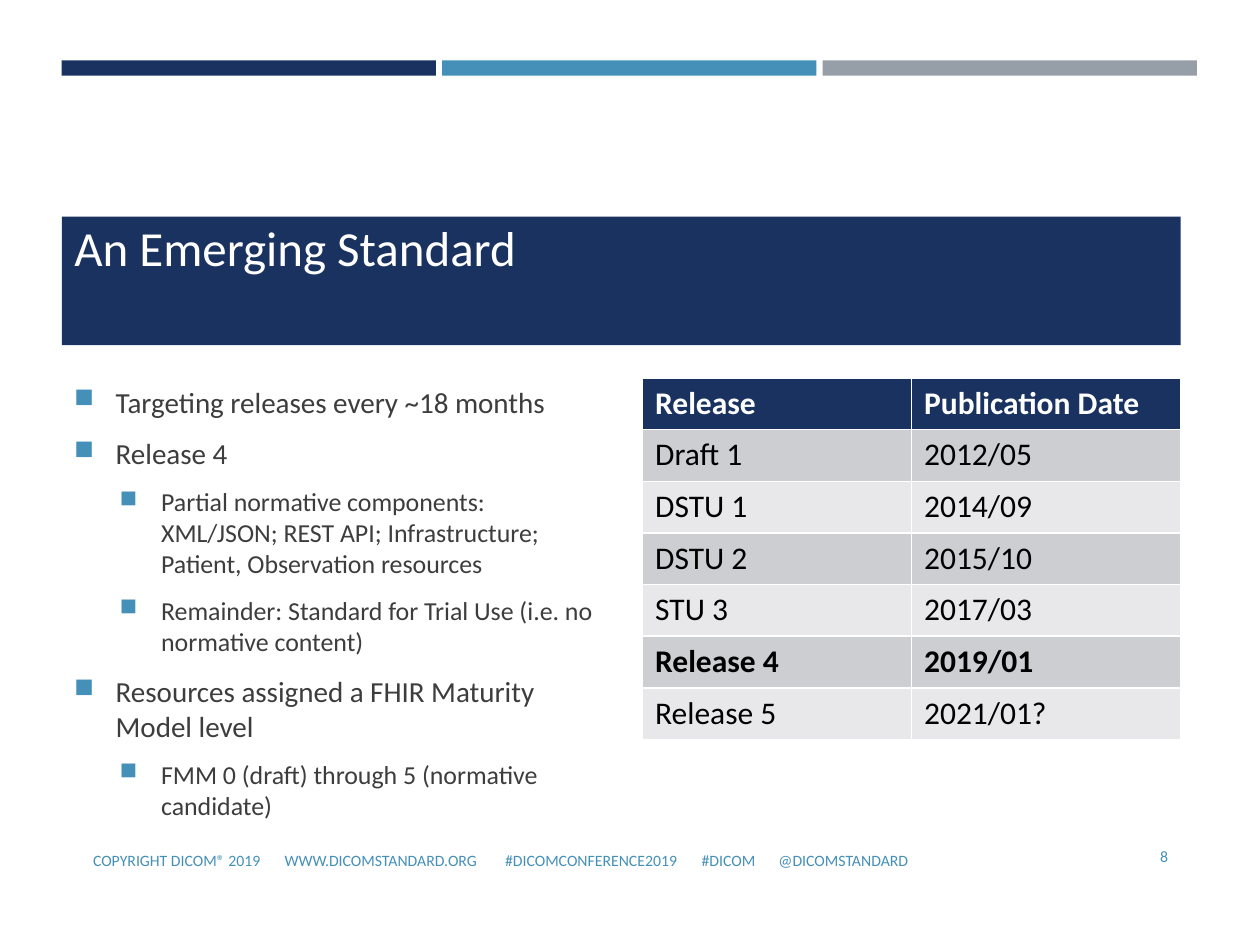
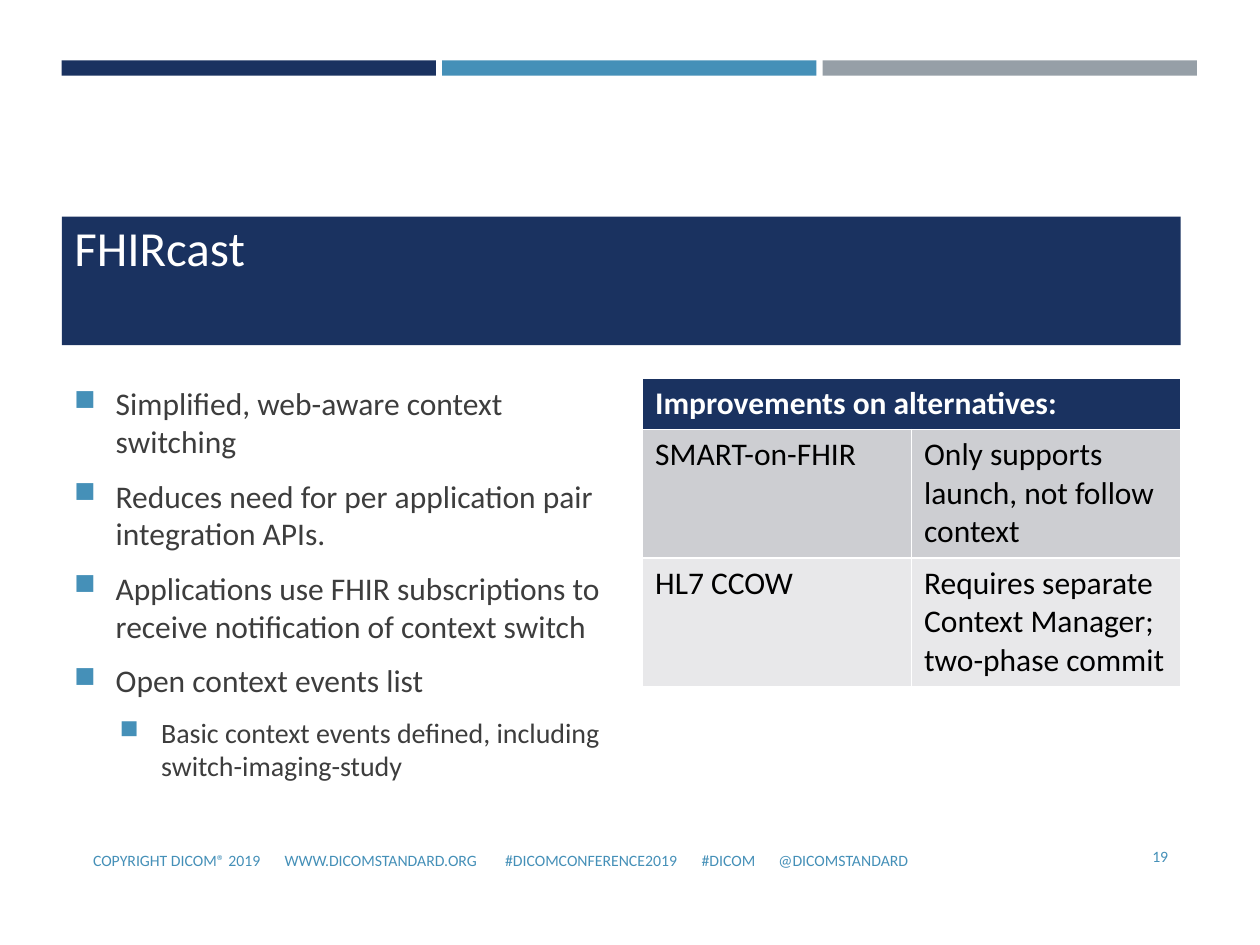
from pptx import Presentation, oxml, util as u
from pptx.dml.color import RGBColor
from pptx.enum import shapes, text
from pptx.oxml import ns

NAVY = RGBColor(0x1A, 0x32, 0x60)
BLUE = RGBColor(0x45, 0x90, 0xB8)
GREY = RGBColor(0x96, 0x9F, 0xA7)
WHITE = RGBColor(0xFF, 0xFF, 0xFF)
BLACK = RGBColor(0, 0, 0)
INK = RGBColor(0x3D, 0x3D, 0x3D)
DARK = RGBColor(0xCD, 0xCE, 0xD2)
LIGHT = RGBColor(0xE8, 0xE8, 0xEA)
FONT = "Calibri"
LEFT, WIDTH = 0.49, 8.88
FOOT = "\t".join(["COPYRIGHT DICOM® 2019", "WWW.DICOMSTANDARD.ORG",
                  "#DICOMCONFERENCE2019", "#DICOM", "@DICOMSTANDARD"])
STOPS = [1.52, 3.27, 4.83, 5.44]

NEWS = [
    (0, "Targeting releases every ~18 months"),
    (0, "Release 4"),
    (1, "Partial normative components: XML/JSON; REST API; Infrastructure; "
        "Patient, Observation resources"),
    (1, "Remainder: Standard for Trial Use (i.e. no normative content)"),
    (0, "Resources assigned a FHIR Maturity Model level"),
    (1, "FMM 0 (draft) through 5 (normative candidate)"),
]
DATES = [
    ("Release", "Publication Date"),
    ("Draft 1", "2012/05"),
    ("DSTU 1", "2014/09"),
    ("DSTU 2", "2015/10"),
    ("STU 3", "2017/03"),
    ("Release 4", "2019/01"),
    ("Release 5", "2021/01?"),
]
CAST = [
    (0, "Simplified, web-aware context switching"),
    (0, "Reduces need for per application pair integration APIs."),
    (0, "Applications use FHIR subscriptions to receive notification of context switch"),
    (0, "Open context events list"),
    (1, "Basic context events defined, including switch-imaging-study"),
]
GAINS = [
    ("Improvements on alternatives:", ""),
    ("SMART-on-FHIR", "Only supports launch, not follow context"),
    ("HL7 CCOW", "Requires separate Context Manager; two-phase commit"),
]


def place(*box):
    return [u.Inches(x) for x in box]


def style(para, size, color, bold=False):
    for run in para.runs:
        font = run.font
        font.name, font.size, font.bold = FONT, u.Pt(size), bold
        font.color.rgb = color


def add_xml(para, body):
    props = para._p.get_or_add_pPr()
    root = oxml.parse_xml(f"<a:pPr {ns.nsdecls('a')}>{body}</a:pPr>")
    for item in list(root):
        props.append(item)
    return props


def add_bar(slide, left, top, width, height, color):
    bar = slide.shapes.add_shape(shapes.MSO_SHAPE.RECTANGLE,
                                 *place(left, top, width, height))
    bar.shadow.inherit = False
    bar.fill.solid()
    bar.fill.fore_color.rgb = color
    bar.line.fill.background()


def add_box(slide, *box):
    frame = slide.shapes.add_textbox(*place(*box)).text_frame
    frame.word_wrap = True
    return frame


def add_title(slide, words):
    title = slide.shapes.title
    title.left, title.top, title.width, title.height = place(LEFT, 1.68, WIDTH, 1.09)
    title.element.getparent().append(title.element)
    frame = title.text_frame
    frame.text = words
    frame.auto_size = text.MSO_AUTO_SIZE.NONE
    frame.vertical_anchor = text.MSO_ANCHOR.TOP
    frame.paragraphs[0].alignment = text.PP_ALIGN.LEFT
    style(frame.paragraphs[0], 28, WHITE)


def add_footer(slide, number):
    note = add_box(slide, 0.64, 6.58, 7.9, 0.5)
    page = add_box(slide, 8.53, 6.51, 0.84, 0.57)
    stops = "".join(f'<a:tab pos="{u.Inches(x)}" algn="l"/>' for x in STOPS)
    add_xml(note.paragraphs[0], f"<a:tabLst>{stops}</a:tabLst>")
    for frame, words in ((note, FOOT), (page, str(number))):
        frame.vertical_anchor = text.MSO_ANCHOR.MIDDLE
        frame.paragraphs[0].text = words
        style(frame.paragraphs[0], 9, BLUE)
    page.paragraphs[0].alignment = text.PP_ALIGN.RIGHT


def add_list(slide, items, sizes):
    frame = add_box(slide, LEFT, 3, 4.41, 3.55)
    for i, (level, words) in enumerate(items):
        para = frame.add_paragraph() if i else frame.paragraphs[0]
        para.text = words
        para.level = level
        props = add_xml(para, f'<a:buClr><a:srgbClr val="{BLUE}"/></a:buClr>'
                              '<a:buSzPct val="92000"/><a:buChar char="■"/>')
        props.set("marL", str(u.Inches((0.33, 0.69)[level])))
        props.set("indent", str(u.Inches(-0.33)))
        if i:
            para.space_before = u.Pt(round(sizes[level] * 0.2, 1))
        para.space_after = u.Pt(6)
        style(para, sizes[level], INK)


def add_grid(slide, rows, height, strong=()):
    head = 0.41
    total = head + height * (len(rows) - 1)
    grid = slide.shapes.add_table(len(rows), 2, *place(5.1, 3, 4.27, total)).table
    for r, row in enumerate(rows):
        grid.rows[r].height = u.Inches(height if r else head)
        for c, words in enumerate(row):
            cell = grid.cell(r, c)
            cell.fill.solid()
            cell.fill.fore_color.rgb = (LIGHT, DARK)[r % 2] if r else NAVY
            cell.text = words
            style(cell.text_frame.paragraphs[0], 18, BLACK if r else WHITE,
                  r == 0 or r in strong)
    return grid


def add_page(deck, title, number):
    slide = deck.slides.add_slide(deck.slide_layouts[5])
    for i, color in enumerate((NAVY, BLUE, GREY)):
        add_bar(slide, LEFT + i * 3.02, 0.48, 2.97, 0.12, color)
    add_bar(slide, LEFT, 1.72, WIDTH, 1.02, NAVY)
    add_title(slide, title)
    add_footer(slide, number)
    return slide


def main():
    deck = Presentation()
    deck.slide_width, deck.slide_height = place(10, 7.5)

    slide = add_page(deck, "An Emerging Standard", 8)
    add_list(slide, NEWS, (16.6, 14.8))
    add_grid(slide, DATES, 0.41, strong=(5,))

    slide = add_page(deck, "FHIRcast", 19)
    add_list(slide, CAST, (18, 16))
    grid = add_grid(slide, GAINS, 1.02)
    grid.cell(0, 0).merge(grid.cell(0, 1))

    deck.save("out.pptx")


if __name__ == "__main__":
    main()
